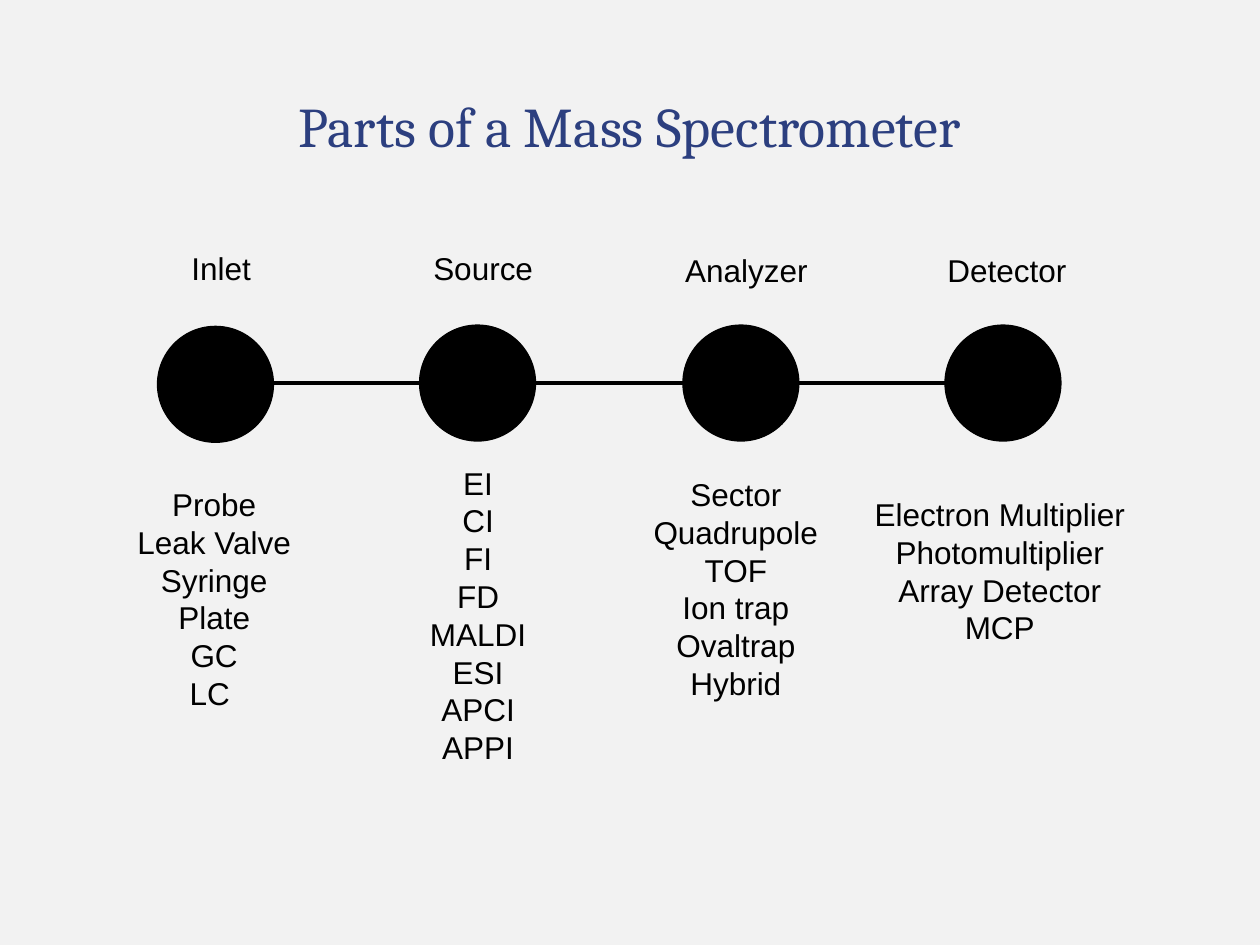
from dataclasses import dataclass

from lxml.etree import SubElement
from pptx import Presentation
from pptx.dml.color import RGBColor
from pptx.enum.shapes import MSO_CONNECTOR, MSO_SHAPE
from pptx.enum.text import MSO_ANCHOR, MSO_AUTO_SIZE, PP_ALIGN
from pptx.oxml.ns import qn
from pptx.util import Emu, Pt

PX = 9144  # EMU per px, 100 px to the inch


@dataclass(frozen=True)
class Theme:
    background: RGBColor = RGBColor(0xF2, 0xF2, 0xF2)
    title: RGBColor = RGBColor(0x2C, 0x3F, 0x7F)
    ink: RGBColor = RGBColor(0, 0, 0)
    title_font: str = "Cambria"
    body_font: str = "Arial"
    title_size: int = 32
    body_size: int = 18
    outline: float = 0.75
    link: float = 2.25


THEME = Theme()
BODY = {"name": THEME.body_font, "size": Pt(THEME.body_size)}
HEADING = {"name": THEME.title_font, "size": Pt(THEME.title_size)}

DIAMETER = 92
CIRCLE_LEFT, CIRCLE_SPAN = 125, 625
LINK_Y = 304

# Name, name box, circle top, examples, examples box
PARTS = [
    ("Inlet", (142, 193, 83, 40), 259,
     ["Probe", "Leak Valve", "Syringe", "Plate", "GC", "LC "], (98, 380, 144, 190)),
    ("Source", (334, 193, 99, 40), 258,
     ["EI", "CI", "FI", "FD", "MALDI", "ESI", "APCI", "APPI"], (331, 363, 97, 252)),
    ("Analyzer", (534, 194, 117, 40), 258,
     ["Sector", "Quadrupole", "TOF", "Ion trap", "Ovaltrap", "Hybrid"],
     (508, 372, 152, 192)),
    ("Detector", (742, 194, 115, 40), 258,
     ["Electron Multiplier", "Photomultiplier", "Array Detector", "MCP"],
     (683, 388, 221, 131)),
]


def px(*lengths):
    return [Emu(length * PX) for length in lengths]


def add_text(page, bounds, lines, font, color, align, frame_format):
    frame = page.shapes.add_textbox(*px(*bounds)).text_frame
    for name, value in frame_format.items():
        setattr(frame, name, value)
    for index, line in enumerate(lines):
        para = frame.add_paragraph() if index else frame.paragraphs[0]
        para.alignment = align
        span = para.add_run()
        span.text = line
        for name, value in font.items():
            setattr(span.font, name, value)
        span.font.color.rgb = color


def add_label(page, bounds, lines, align):
    add_text(page, bounds, lines, BODY, THEME.ink, align,
             {"word_wrap": False, "auto_size": MSO_AUTO_SIZE.SHAPE_TO_FIT_TEXT})


def add_circle(page, left, top):
    circle = page.shapes.add_shape(MSO_SHAPE.OVAL, *px(left, top, DIAMETER, DIAMETER))
    circle.shadow.inherit = False
    circle.fill.solid()
    circle.fill.fore_color.rgb = THEME.ink
    circle.line.color.rgb = THEME.ink
    circle.line.width = Pt(THEME.outline)


def add_link(page, start, end):
    link = page.shapes.add_connector(
        MSO_CONNECTOR.STRAIGHT, *px(start, LINK_Y, end, LINK_Y))
    link.line.color.rgb = THEME.ink
    link.line.width = Pt(THEME.link)
    SubElement(link._element.spPr, qn("a:effectLst"))


def main():
    deck = Presentation()
    deck.slide_width, deck.slide_height = px(1000, 750)
    page = deck.slides.add_slide(deck.slide_layouts[6])
    page.background.fill.solid()
    page.background.fill.fore_color.rgb = THEME.background

    add_text(page, (75, 58, 850, 83), ["Parts of a Mass Spectrometer"],
             HEADING, THEME.title, PP_ALIGN.CENTER,
             {"word_wrap": True, "vertical_anchor": MSO_ANCHOR.MIDDLE})

    gaps = len(PARTS) - 1
    lefts = [CIRCLE_LEFT + round(CIRCLE_SPAN * i / gaps) for i in range(len(PARTS))]
    for left, (name, name_box, top, examples, examples_box) in zip(lefts, PARTS):
        add_label(page, name_box, [name], PP_ALIGN.LEFT)
        add_circle(page, left, top)
        add_label(page, examples_box, examples, PP_ALIGN.CENTER)
    for left, following in zip(lefts, lefts[1:]):
        add_link(page, left + DIAMETER, following)

    deck.save("out.pptx")


if __name__ == "__main__":
    main()
